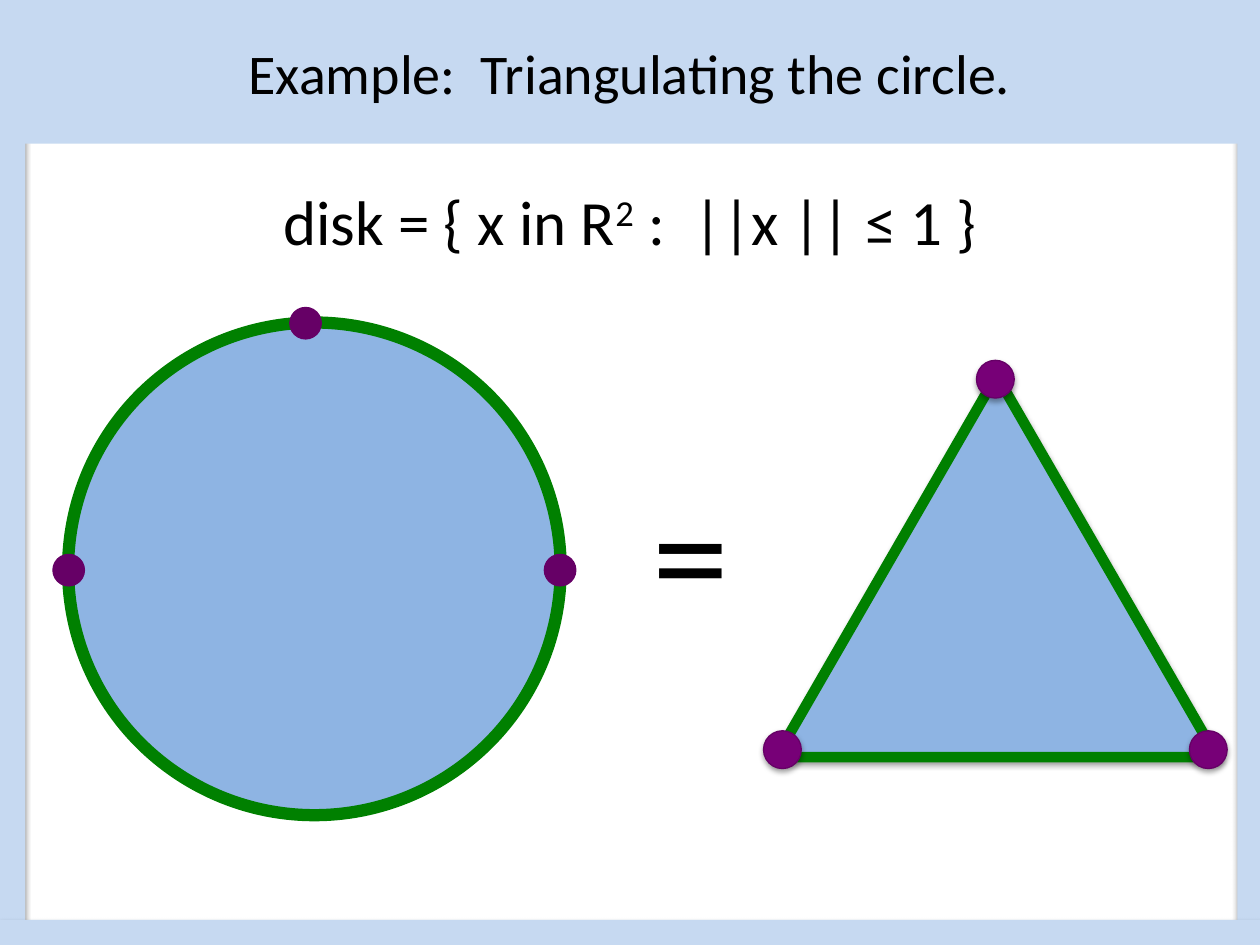
from lxml import etree
from pptx import Presentation
from pptx.dml.color import RGBColor
from pptx.enum.shapes import MSO_SHAPE
from pptx.enum.text import MSO_ANCHOR, PP_ALIGN
from pptx.oxml.ns import qn
from pptx.util import Inches, Pt

RECT, OVAL, TRI = MSO_SHAPE.RECTANGLE, MSO_SHAPE.OVAL, MSO_SHAPE.ISOSCELES_TRIANGLE
LEFT, CENTER = PP_ALIGN.LEFT, PP_ALIGN.CENTER
MIDDLE, TOP = MSO_ANCHOR.MIDDLE, MSO_ANCHOR.TOP
COLS, ROWS = 100, 75
WIDTH, HEIGHT = Inches(10), Inches(7.5)


def paint(color, value):
    color.rgb = RGBColor.from_string(value)


def cast(shape):
    """Add a soft shadow that falls straight down."""
    effects = shape._element.spPr.find(qn("a:effectLst"))
    shadow = etree.SubElement(effects, qn("a:outerShdw"), blurRad=str(Pt(3.1)),
                              dist=str(Pt(1.8)), dir="5400000", rotWithShape="0")
    black = etree.SubElement(shadow, qn("a:srgbClr"), val="000000")
    etree.SubElement(black, qn("a:alpha"), val="35000")


def write(shape, *parts, size, align=CENTER, anchor=TOP, wrap=True):
    """Set one paragraph; each part is (text, baseline shift in percent)."""
    frame = shape.text_frame
    frame.word_wrap, frame.vertical_anchor = wrap, anchor
    line = frame.paragraphs[0]
    line.alignment = align
    for text, shift in parts:
        run = line.add_run()
        run.text = text
        run.font.size, run.font.name = Pt(size), "Calibri"
        paint(run.font.color, "000000")
        if shift:
            run._r.get_or_add_rPr().set("baseline", str(shift * 1000))


class Board:
    """Draws on one slide, in columns and rows of a 100 by 75 grid."""
    frame, face, edge = "C6D9F1", "8EB4E3", "008000"
    rim = "660066"

    def __init__(self, slide):
        self.shapes = slide.shapes

    def place(self, left, top, width, height):
        col, row = WIDTH / COLS, HEIGHT / ROWS
        return [int(n) for n in (left * col, top * row, width * col, height * row)]

    def shape(self, kind, box, fill, line=None, weight=0, shade=False):
        item = self.shapes.add_shape(kind, *self.place(*box))
        item.shadow.inherit = False
        item.fill.solid()
        paint(item.fill.fore_color, fill)
        if line:
            paint(item.line.color, line)
            item.line.width = Pt(weight)
        else:
            item.line.fill.background()
        if shade:
            cast(item)
        return item

    def band(self, *box, shade=True):
        return self.shape(RECT, box, self.frame, shade=shade)

    def area(self, kind, box, weight, shade=False):
        self.shape(kind, box, self.face, self.edge, weight, shade)

    def dots(self, spots, size, fill, shade=False):
        """Mark each spot with a dot centred on it."""
        for x, y in spots:
            box = (x - size / 2, y - size / 2, size, size)
            self.shape(OVAL, box, fill, self.rim, 0.75, shade)

    def text(self, box, *parts, **style):
        write(self.shapes.add_textbox(*self.place(*box)), *parts, **style)


def main():
    deck = Presentation()
    deck.slide_width, deck.slide_height = WIDTH, HEIGHT
    board = Board(deck.slides.add_slide(deck.slide_layouts[6]))

    board.band(0, 0, 2, ROWS)
    board.band(98.2, 0, 1.8, ROWS)
    board.band(0, 73, COLS, 2)
    title = board.band(0, 0, COLS, 11.4, shade=False)
    write(title, ("Example:  Triangulating the circle.", 0), size=32, anchor=MIDDLE)

    board.area(OVAL, (5.4, 25.6, 39.1, 39.1), 7)
    board.dots([(5.45, 45.25), (44.45, 45.25), (24.25, 25.65)], 2.5, board.rim)
    board.text((8.3, 14, 83.4, 7.1), ("disk = { x in R", 0), ("2", 30),
               (" :  ||x || ≤ 1 }", 0), size=36)

    board.area(TRI, (61.6, 29.8, 35, 30.3), 6, shade=True)
    board.dots([(95.9, 59.5), (79, 30.1), (62.1, 59.5)], 3, "770077", shade=True)
    board.text((50.8, 35.7, 8.2, 15.8), ("=", 0), size=88, align=LEFT, wrap=False)

    deck.save("out.pptx")


if __name__ == "__main__":
    main()
